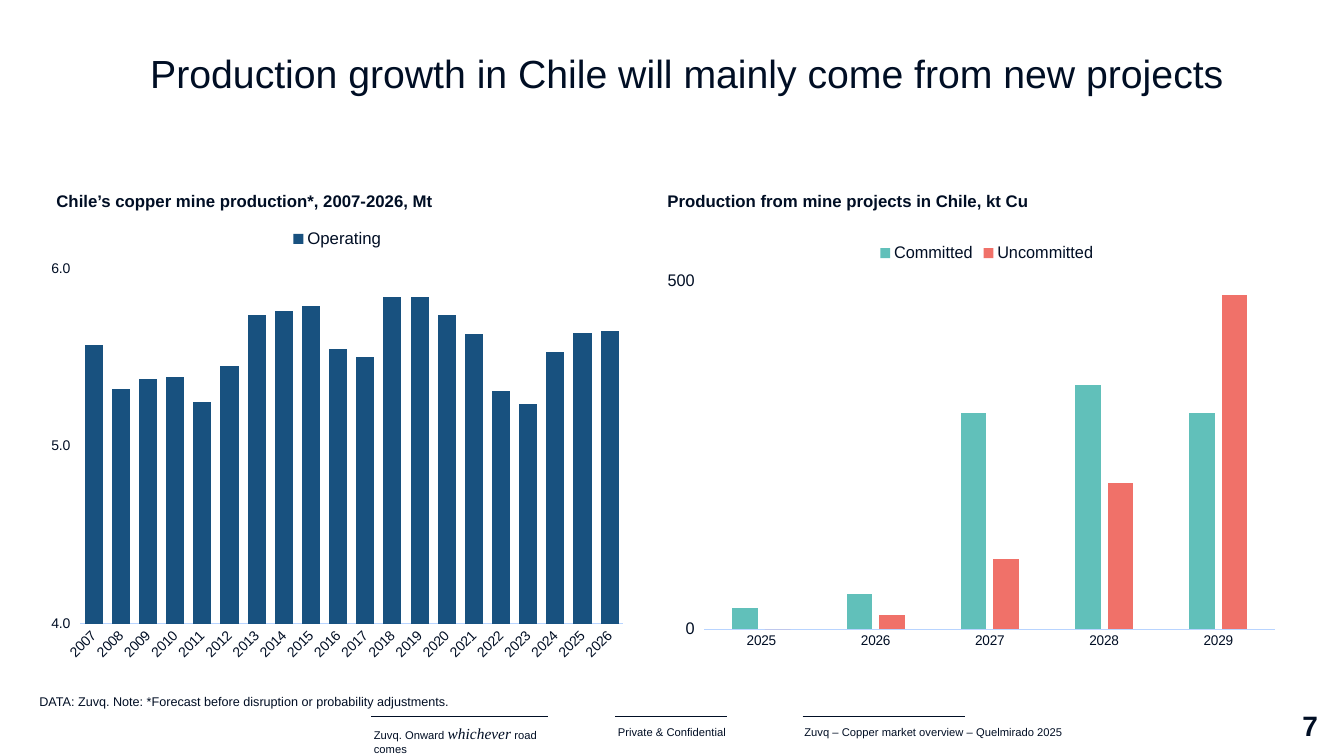
import pptx
import pptx.chart.data
import pptx.dml.color
import pptx.enum.chart
import pptx.enum.shapes
import pptx.enum.text
import pptx.oxml
import pptx.oxml.ns
import pptx.util
from pptx.util import Inches

ALIGN = pptx.enum.text.PP_ALIGN
ANCHOR = pptx.enum.text.MSO_ANCHOR
CHART = pptx.enum.chart.XL_CHART_TYPE
INK, AXIS_LINE = "000E24", "B8D4FF"
NAVY, TEAL, CORAL = "18517F", "61C0BA", "F07169"


def colour(code):
    return pptx.dml.color.RGBColor.from_string(code)


class SlideBuilder:
    def __init__(self, page, font="Arial", ink=INK):
        self.page, self.font, self.ink = page, font, ink

    def style(self, font, size, bold=False):
        font.name = self.font
        font.size = pptx.util.Pt(size)
        font.bold = bold
        font.color.rgb = colour(self.ink)

    def title(self, text, left, top, width, height, size):
        box = self.page.shapes.title
        box.left, box.top, box.width, box.height = map(Inches, (left, top, width, height))
        frame = box.text_frame
        frame.text = text
        frame.vertical_anchor = ANCHOR.MIDDLE
        para = frame.paragraphs[0]
        para.alignment, para.line_spacing = ALIGN.LEFT, 0.9
        self.style(para.runs[0].font, size)

    def text(self, pieces, left, top, width, height, size, bold=False,
             align=ALIGN.LEFT, anchor=ANCHOR.TOP, flush=False):
        box = self.page.shapes.add_textbox(*map(Inches, (left, top, width, height)))
        frame = box.text_frame
        frame.word_wrap = True
        frame.vertical_anchor = anchor
        if flush:
            frame.margin_left = 0
            frame.margin_top = frame.margin_right = frame.margin_bottom = Inches(0.12)
        para = frame.paragraphs[0]
        para.alignment = align
        for piece in pieces:
            span = para.add_run()
            span.text = piece
            self.style(span.font, size, bold)
        return para

    def rule(self, left, right, top):
        line = self.page.shapes.add_connector(
            pptx.enum.shapes.MSO_CONNECTOR.STRAIGHT,
            Inches(left), Inches(top), Inches(right), Inches(top))
        line.line.color.rgb = colour(self.ink)
        line.line.width = pptx.util.Pt(0.5)
        line._element.spPr.append(pptx.oxml.parse_xml(
            "<a:effectLst %s/>" % pptx.oxml.ns.nsdecls("a")))

    def columns(self, kind, years, series, place, scale, number_format,
                size, gap, overlap, layout=None):
        data = pptx.chart.data.CategoryChartData()
        data.categories = [str(year) for year in years]
        for name, values, _ in series:
            data.add_series(name, values)
        chart = self.page.shapes.add_chart(kind, *map(Inches, place), data).chart
        chart.has_title = False
        self.style(chart.font, size)

        chart.has_legend = True
        chart.legend.position = pptx.enum.chart.XL_LEGEND_POSITION.TOP
        chart.legend.include_in_layout = False
        self.style(chart.legend.font, 12)

        plot = chart.plots[0]
        plot.gap_width, plot.overlap = gap, overlap
        plot.vary_by_categories = False
        for bars, (_, _, fill) in zip(plot.series, series):
            bars.format.fill.solid()
            bars.format.fill.fore_color.rgb = colour(fill)
            bars.invert_if_negative = False

        years_axis, value_axis = chart.category_axis, chart.value_axis
        years_axis.major_tick_mark = pptx.enum.chart.XL_TICK_MARK.NONE
        years_axis.format.line.color.rgb = colour(AXIS_LINE)
        years_axis.format.line.width = pptx.util.Pt(0.75)
        self.style(years_axis.tick_labels.font, 10)
        value_axis.minimum_scale, value_axis.maximum_scale, value_axis.major_unit = scale
        value_axis.has_major_gridlines = False
        value_axis.format.line.fill.background()
        value_axis.tick_labels.number_format = number_format
        value_axis.tick_labels.number_format_is_linked = False
        self.style(value_axis.tick_labels.font, size)

        if layout:
            area = chart._chartSpace.chart.plotArea
            for old in area.findall(pptx.oxml.ns.qn("c:layout")):
                area.remove(old)
            sizes = "".join('<c:%s val="%s"/>' % pair for pair in zip("xywh", layout))
            area.insert(0, pptx.oxml.parse_xml(
                '<c:layout %s><c:manualLayout><c:layoutTarget val="inner"/>'
                '<c:xMode val="edge"/><c:yMode val="edge"/>%s'
                "</c:manualLayout></c:layout>" % (pptx.oxml.ns.nsdecls("c"), sizes)))


def main():
    deck = pptx.Presentation()
    deck.slide_width, deck.slide_height = Inches(13.33), Inches(7.5)
    page = deck.slides.add_slide(deck.slide_layouts[5])
    builder = SlideBuilder(page)

    # Title
    builder.title("Production growth in Chile will mainly come from new projects",
                  1.39, 0.31, 11.57, 0.88, 28)

    # Chart headings
    for heading, left, width in (
            ("Chile’s copper mine production*, 2007-2026, Mt", 0.56, 5.9),
            ("Production from mine projects in Chile, kt Cu", 6.62, 6.15)):
        builder.text([heading], left, 1.82, width, 0.35, 12, bold=True,
                     anchor=ANCHOR.MIDDLE, flush=True)

    # Mine production
    operating = (5.57, 5.32, 5.38, 5.39, 5.25, 5.45, 5.74, 5.76, 5.79, 5.55,
                 5.5, 5.84, 5.84, 5.74, 5.63, 5.31, 5.24, 5.53, 5.64, 5.65)
    builder.columns(CHART.COLUMN_STACKED, range(2007, 2027),
                    [("Operating", operating, NAVY)],
                    (0.39, 2.17, 5.91, 4.47), (4, 6, 1), "0.0", 10, 50, 100)

    # Project production
    builder.columns(CHART.COLUMN_CLUSTERED, range(2025, 2030),
                    [("Committed", (30, 50, 310, 350, 310), TEAL),
                     ("Uncommitted", (0, 20, 100, 210, 480), CORAL)],
                    (6.62, 2.31, 6.15, 4.32), (0, 500, 500), "#,##0", 12, 219, -27,
                    layout=(0.03, 0.11, 0.95, 0.8))

    # Source note
    builder.text(["DATA: Zuvq. Note: *Forecast before disruption or probability adjustments."],
                 0.39, 6.83, 12.11, 0.26, 9, anchor=ANCHOR.MIDDLE, flush=True)

    # Footer
    for left, right in ((3.68, 5.44), (6.1, 7.21), (7.96, 9.57)):
        builder.rule(left, right, 7.11)
    slogan = builder.text(["Zuvq. Onward ", "whichever", " road comes"],
                          3.61, 7.13, 1.93, 0.29, 8)
    accent = slogan.runs[1].font
    accent.name, accent.size, accent.italic = "Times New Roman", pptx.util.Pt(11), True
    builder.text(["Private & Confidential"], 5.83, 7.15, 1.67, 0.24, 8, align=ALIGN.CENTER)
    builder.text(["Zuvq – Copper market overview – Quelmirado 2025"],
                 7.88, 7.15, 3.47, 0.34, 8)
    builder.text(["7"], 11.93, 6.9, 1.24, 0.6, 20, bold=True,
                 align=ALIGN.RIGHT, anchor=ANCHOR.MIDDLE)

    deck.save("out.pptx")


if __name__ == "__main__":
    main()
